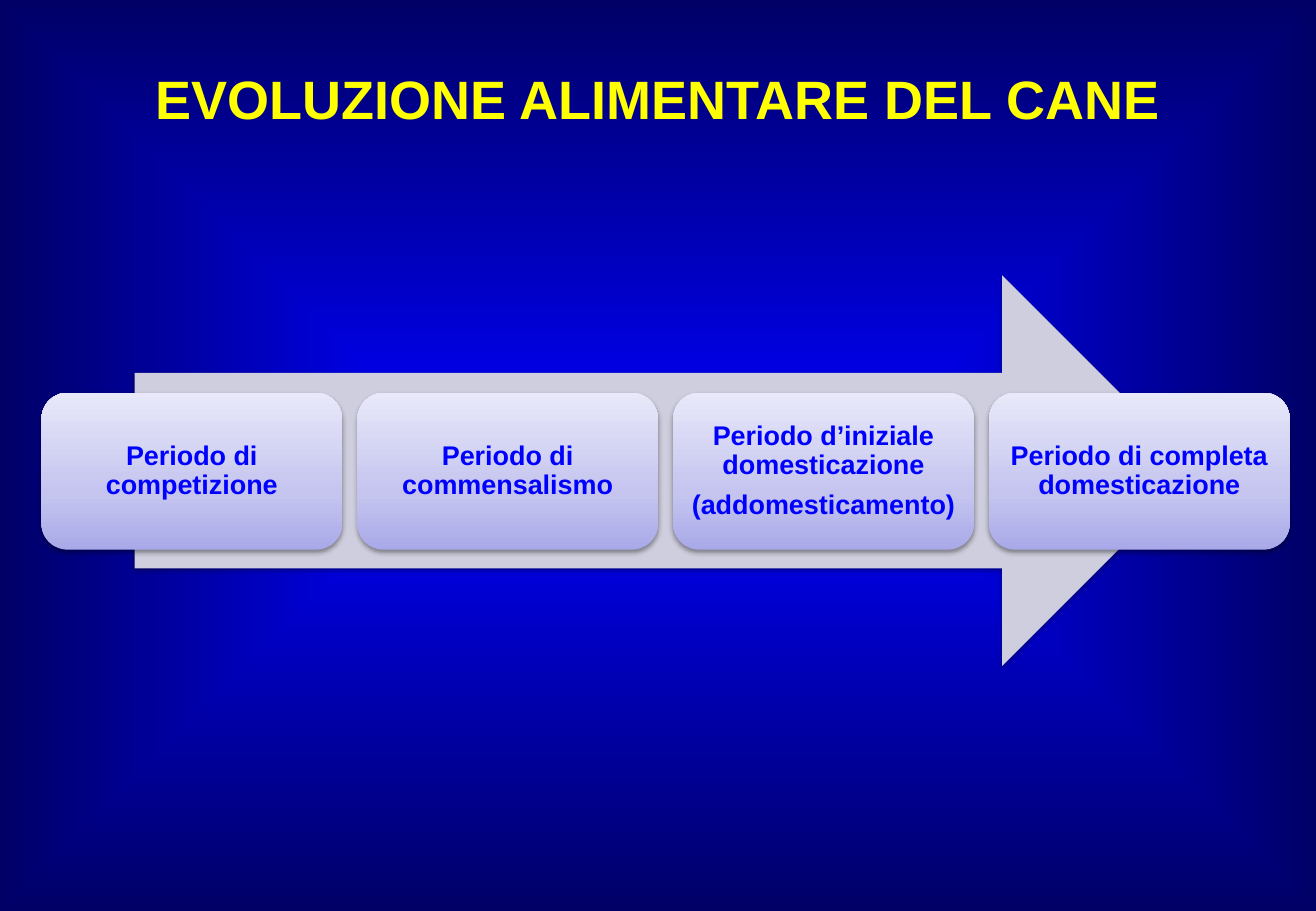
from dataclasses import dataclass

import lxml.etree
import pptx
import pptx.dml.color
import pptx.enum.shapes
import pptx.enum.text
import pptx.oxml
import pptx.oxml.ns
import pptx.shapes.autoshape
import pptx.slide
import pptx.text.text
import pptx.util

PX = 7620  # EMU: 120 px to the inch
RGB = pptx.dml.color.RGBColor
SHAPE = pptx.enum.shapes.MSO_SHAPE
FONT = "Arial"

BLUE = RGB(0x00, 0x00, 0xFF)
NAVY = RGB(0x00, 0x00, 0x66)
YELLOW = RGB(0xFF, 0xFF, 0x00)
ARROW_GREY = RGB(0xCE, 0xCE, 0xDE)
LILAC = RGB(0xA9, 0xA9, 0xE9)
LIGHT_LILAC = RGB(0xC4, 0xC4, 0xEF)
PALE_LILAC = RGB(0xE8, 0xE8, 0xFA)
BLACK = RGB(0x00, 0x00, 0x00)

FROM_CENTRE = ('<a:path path="shape"><a:fillToRect l="50000" t="50000" '
               'r="50000" b="50000"/></a:path>')
UPWARDS = '<a:lin ang="16200000" scaled="0"/>'


@dataclass(frozen=True)
class Stop:
    percent: int
    color: RGB


@dataclass(frozen=True)
class Box:
    left: int
    top: int
    width: int
    height: int

    def emu(self) -> tuple[int, int, int, int]:
        return (self.left * PX, self.top * PX, self.width * PX, self.height * PX)


SLIDE = Box(0, 0, 1300, 900)
TITLE = Box(65, 36, 1170, 121)
ARROW = Box(133, 272, 1050, 386)
FIRST_PERIOD = Box(41, 388, 297, 155)
PERIOD_PITCH = 312
PERIOD_INSET = 8

BACKGROUND = [Stop(0, BLUE), Stop(100, NAVY)]
PERIOD_FILL = [Stop(0, LILAC), Stop(35, LIGHT_LILAC), Stop(100, PALE_LILAC)]
PERIODS = [
    "Periodo di competizione",
    "Periodo di commensalismo",
    "Periodo d’iniziale domesticazione\n(addomesticamento)",
    "Periodo di completa domesticazione",
]


def parse_drawing(xml: str) -> lxml.etree.ElementBase:
    """Parse one element whose own tag and children use the a: prefix."""
    tag_end = min(i for i in (xml.find(" "), xml.find(">")) if i > 0)
    return pptx.oxml.parse_xml(
        f"{xml[:tag_end]} {pptx.oxml.ns.nsdecls('a')}{xml[tag_end:]}")


def set_gradient(parent: lxml.etree.ElementBase, stops: list[Stop],
                 direction: str) -> None:
    """Replace the first gradient found under parent."""
    old = next(parent.iter(pptx.oxml.ns.qn("a:gradFill")))
    gs = "".join(f'<a:gs pos="{stop.percent * 1000}"><a:srgbClr val="{stop.color}"/></a:gs>'
                 for stop in stops)
    new = parse_drawing(f'<a:gradFill rotWithShape="1"><a:gsLst>{gs}</a:gsLst>'
                        f"{direction}</a:gradFill>")
    old.getparent().replace(old, new)


def add_shadowed_shape(s: pptx.slide.Slide, kind: SHAPE,
                       box: Box) -> pptx.shapes.autoshape.Shape:
    shape = s.shapes.add_shape(kind, *box.emu())
    shape.line.fill.background()
    shape.shadow.inherit = False
    effects = next(shape.element.iter(pptx.oxml.ns.qn("a:effectLst")))
    effects.append(parse_drawing(
        f'<a:outerShdw blurRad="{pptx.util.Pt(3.1)}" dist="{pptx.util.Pt(1.6)}" '
        f'dir="5400000" rotWithShape="0"><a:srgbClr val="{BLACK}">'
        '<a:alpha val="38000"/></a:srgbClr></a:outerShdw>'))
    return shape


def set_text(tf: pptx.text.text.TextFrame, text: str, size: int, color: RGB) -> None:
    tf.text = text
    tf.word_wrap = True
    tf.vertical_anchor = pptx.enum.text.MSO_ANCHOR.MIDDLE
    for p in tf.paragraphs:
        p.alignment = pptx.enum.text.PP_ALIGN.CENTER
        for r in p.runs:
            r.font.name = FONT
            r.font.size = pptx.util.Pt(size)
            r.font.bold = True
            r.font.color.rgb = color


def add_period(s: pptx.slide.Slide, index: int, text: str) -> None:
    first = FIRST_PERIOD
    box = Box(first.left + index * PERIOD_PITCH, first.top, first.width, first.height)
    shape = add_shadowed_shape(s, SHAPE.ROUNDED_RECTANGLE, box)
    shape.fill.gradient()
    set_gradient(shape.element, PERIOD_FILL, UPWARDS)
    tf = shape.text_frame
    tf.margin_left = tf.margin_right = PERIOD_INSET * PX
    tf.margin_top = tf.margin_bottom = PERIOD_INSET * PX
    set_text(tf, text, 16, BLUE)
    for i, p in enumerate(tf.paragraphs):
        p.line_spacing = 0.9
        if i:
            p.space_before = pptx.util.Pt(6)


def main() -> None:
    prs = pptx.Presentation()
    prs.slide_width, prs.slide_height = SLIDE.width * PX, SLIDE.height * PX
    s = prs.slides.add_slide(prs.slide_layouts.get_by_name("Title Only"))
    s.background.fill.gradient()
    set_gradient(s.element, BACKGROUND, FROM_CENTRE)

    title = s.shapes.title
    title.left, title.top, title.width, title.height = TITLE.emu()
    set_text(title.text_frame, "EVOLUZIONE ALIMENTARE DEL CANE", 32, YELLOW)

    arrow = add_shadowed_shape(s, SHAPE.RIGHT_ARROW, ARROW)
    arrow.fill.solid()
    arrow.fill.fore_color.rgb = ARROW_GREY

    for index, text in enumerate(PERIODS):
        add_period(s, index, text)

    prs.save("out.pptx")


if __name__ == "__main__":
    main()
